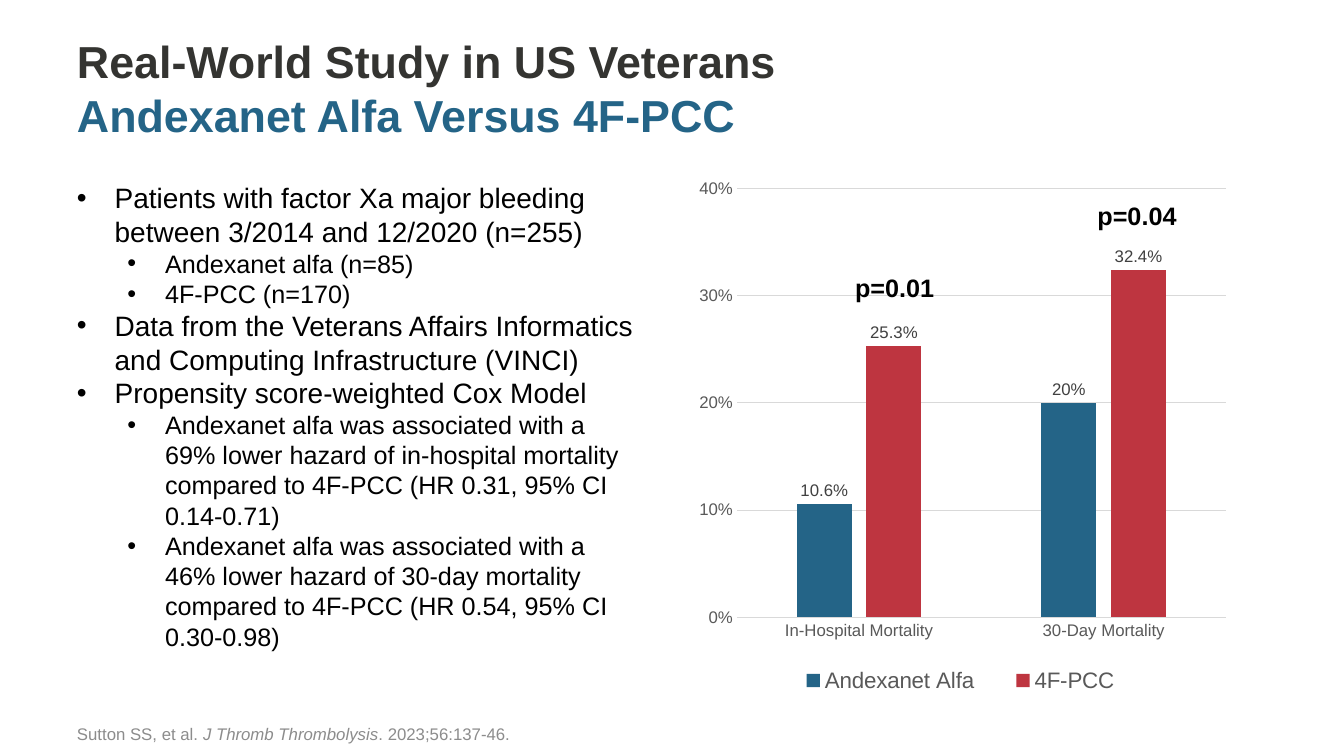
from lxml.etree import SubElement
from pptx import Presentation
from pptx.chart.data import CategoryChartData
from pptx.dml.color import RGBColor
from pptx.enum.chart import (XL_CHART_TYPE as ChartType, XL_LABEL_POSITION as LabelPosition,
                             XL_LEGEND_POSITION as LegendPosition, XL_TICK_MARK as TickMark)
from pptx.enum.text import MSO_ANCHOR as Anchor, PP_ALIGN as Align
from pptx.oxml import parse_xml
from pptx.oxml.ns import nsdecls, qn
from pptx.util import Cm, Pt

BLUE, RED, BLACK, GRID = "246487", "BE3540", "000000", "D9D9D9"
AXIS_TEXT, LABEL_TEXT, CITATION_TEXT = "595959", "404040", "8C8C8C"

BULLETS = [
    (0, "Patients with factor Xa major bleeding between 3/2014 and 12/2020 (n=255)"),
    (1, "Andexanet alfa (n=85)"),
    (1, "4F-PCC (n=170)"),
    (0, "Data from the Veterans Affairs Informatics and Computing Infrastructure (VINCI)"),
    (0, "Propensity score-weighted Cox Model"),
    (1, "Andexanet alfa was associated with a 69% lower hazard of in-hospital mortality "
        "compared to 4F-PCC (HR 0.31, 95% CI 0.14-0.71)"),
    (1, "Andexanet alfa was associated with a 46% lower hazard of 30-day mortality "
        "compared to 4F-PCC (HR 0.54, 95% CI 0.30-0.98)"),
]
MORTALITY = [("Andexanet Alfa", (0.106, 0.2), BLUE), ("4F-PCC", (0.253, 0.324), RED)]


def color(value):
    return RGBColor.from_string(value)


def style(font, size, fill, bold=False, italic=False):
    font.name, font.size, font.bold, font.italic = "Arial", Pt(size), bold, italic
    font.color.rgb = color(fill)


def add_text(page, area, anchor=Anchor.TOP, wrap=True):
    frame = page.shapes.add_textbox(*map(Cm, area)).text_frame
    frame.word_wrap, frame.vertical_anchor = wrap, anchor
    return frame


def add_title(page, area):
    para = add_text(page, area, Anchor.MIDDLE).paragraphs[0]
    para.text = "Real-World Study in US Veterans\vAndexanet Alfa Versus 4F-PCC"
    for span, fill in zip(para.runs, ("343431", BLUE)):
        style(span.font, 32, fill, bold=True)


def add_bullets(page, area):
    frame = add_text(page, area)
    frame.text = "\n".join(text for _, text in BULLETS)
    for para, (level, _) in zip(frame.paragraphs, BULLETS):
        para.level = level
        props = para._p.get_or_add_pPr()
        props.set("marL", str(Cm(0.95 + 1.27 * level)))
        props.set("indent", str(-Cm(0.95)))
        SubElement(props, qn("a:buFont"), typeface="Arial")
        SubElement(props, qn("a:buChar"), char="•")
        style(para.runs[0].font, 20 - 2 * level, BLACK)


def style_axes(chart):
    for axis in (chart.category_axis, chart.value_axis):
        axis.major_tick_mark = axis.minor_tick_mark = TickMark.NONE
        style(axis.tick_labels.font, 12, AXIS_TEXT)
    values = chart.value_axis
    values.minimum_scale, values.maximum_scale, values.major_unit = 0, 0.4, 0.1
    values.tick_labels.number_format = "0%"
    values.tick_labels.number_format_is_linked = False
    values.format.line.fill.background()
    for line in (chart.category_axis.format.line, values.major_gridlines.format.line):
        line.color.rgb, line.width = color(GRID), Pt(0.75)


def style_series(series, fill):
    series.format.fill.solid()
    series.format.fill.fore_color.rgb = color(fill)
    labels = series.data_labels
    labels.show_value, labels.position = True, LabelPosition.OUTSIDE_END
    labels.number_format, labels.number_format_is_linked = "0.0%", False
    style(labels.font, 12, LABEL_TEXT)


def set_layout(parent, index, area, part, target=""):
    """Place a chart part, given in centimetres within the chart area."""
    for layout in parent.findall(qn("c:layout")):
        parent.remove(layout)
    x, y, width, height = part
    shares = (x / area[2], y / area[3], width / area[2], height / area[3])
    sizes = "".join(f'<c:{tag} val="{share:.4f}"/>' for tag, share in zip("xywh", shares))
    parent.insert(index, parse_xml(
        f'<c:layout {nsdecls("c")}><c:manualLayout>{target}'
        f'<c:xMode val="edge"/><c:yMode val="edge"/>{sizes}</c:manualLayout></c:layout>'))


def add_mortality_chart(page, area):
    data = CategoryChartData(number_format="0.0%")
    data.categories = ["In-Hospital Mortality", "30-Day Mortality"]
    for name, values, _ in MORTALITY:
        data.add_series(name, values)
    chart = page.shapes.add_chart(ChartType.COLUMN_CLUSTERED, *map(Cm, area), data).chart
    chart.has_title = False
    style(chart.font, 10, BLACK)
    style_axes(chart)
    plot = chart.plots[0]
    plot.gap_width, plot.overlap, plot.vary_by_categories = 219, -27, False
    for series, (_, _, fill) in zip(plot.series, MORTALITY):
        style_series(series, fill)
    # The round value is labelled without a decimal
    label = plot.series[0].points[1].data_label
    label.text_frame.text = "20%"
    style(label.text_frame.paragraphs[0].runs[0].font, 12, LABEL_TEXT)
    label.position = LabelPosition.OUTSIDE_END
    # Legend and plot area
    chart.has_legend = True
    chart.legend.position, chart.legend.include_in_layout = LegendPosition.BOTTOM, False
    style(chart.legend.font, 16, AXIS_TEXT)
    set_layout(chart.legend._element, 1, area, (2.95, 12.48, 9.5, 1))
    set_layout(chart._chartSpace.chart.plotArea, 0, area, (2.06, 0.58, 12.34, 10.81),
               '<c:layoutTarget val="inner"/>')
    # Significance above each pair of columns
    left, top = area[:2]
    for text, x, y in (("p=0.01", 4.78, 2.57), ("p=0.04", 10.89, 0.76)):
        frame = add_text(page, (left + x, top + y, 2.51, 1.02), wrap=False)
        frame.text = text
        para = frame.paragraphs[0]
        para.alignment = Align.CENTER
        style(para.runs[0].font, 18, BLACK, bold=True)


def add_citation(page, area):
    para = add_text(page, area, Anchor.BOTTOM).paragraphs[0]
    for text in ("Sutton SS, et al. ", "J Thromb Thrombolysis", ". 2023;56:137-46."):
        span = para.add_run()
        span.text = text
        style(span.font, 12, CITATION_TEXT, italic=text.startswith("J "))


def build_slide(deck):
    page = deck.slides.add_slide(deck.slide_layouts[6])
    margin = 1.69
    add_title(page, (margin, 0.56, 29.85, 3.3))
    add_mortality_chart(page, (16.51, 4.17, 14.4, 13.49))
    add_bullets(page, (margin, 4.43, 14.63, 12.22))
    add_citation(page, (margin, 17.65, 29.21, 1.22))


def main():
    deck = Presentation()
    deck.slide_width, deck.slide_height = Cm(33.87), Cm(19.05)
    build_slide(deck)
    deck.save("out.pptx")


if __name__ == "__main__":
    main()
